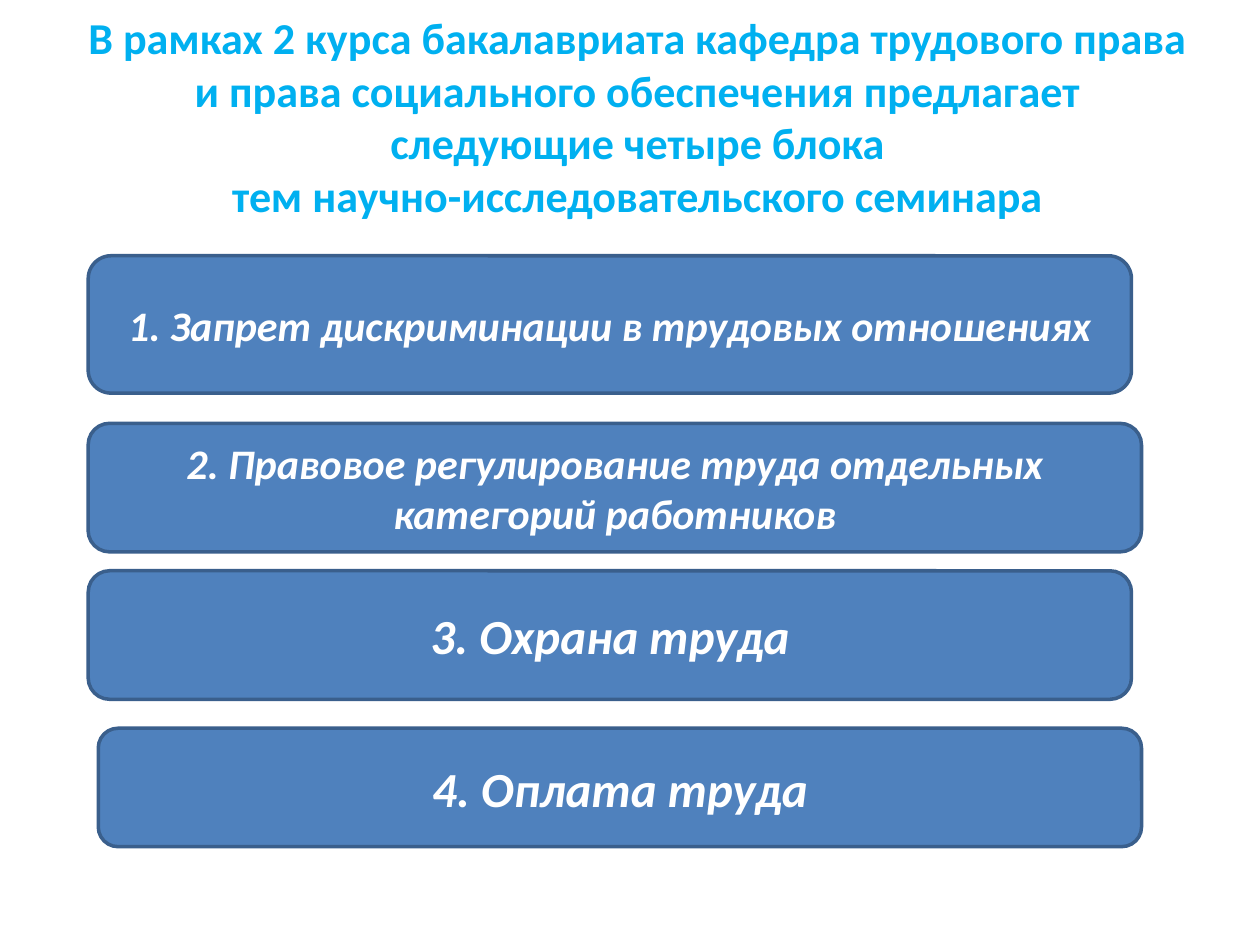
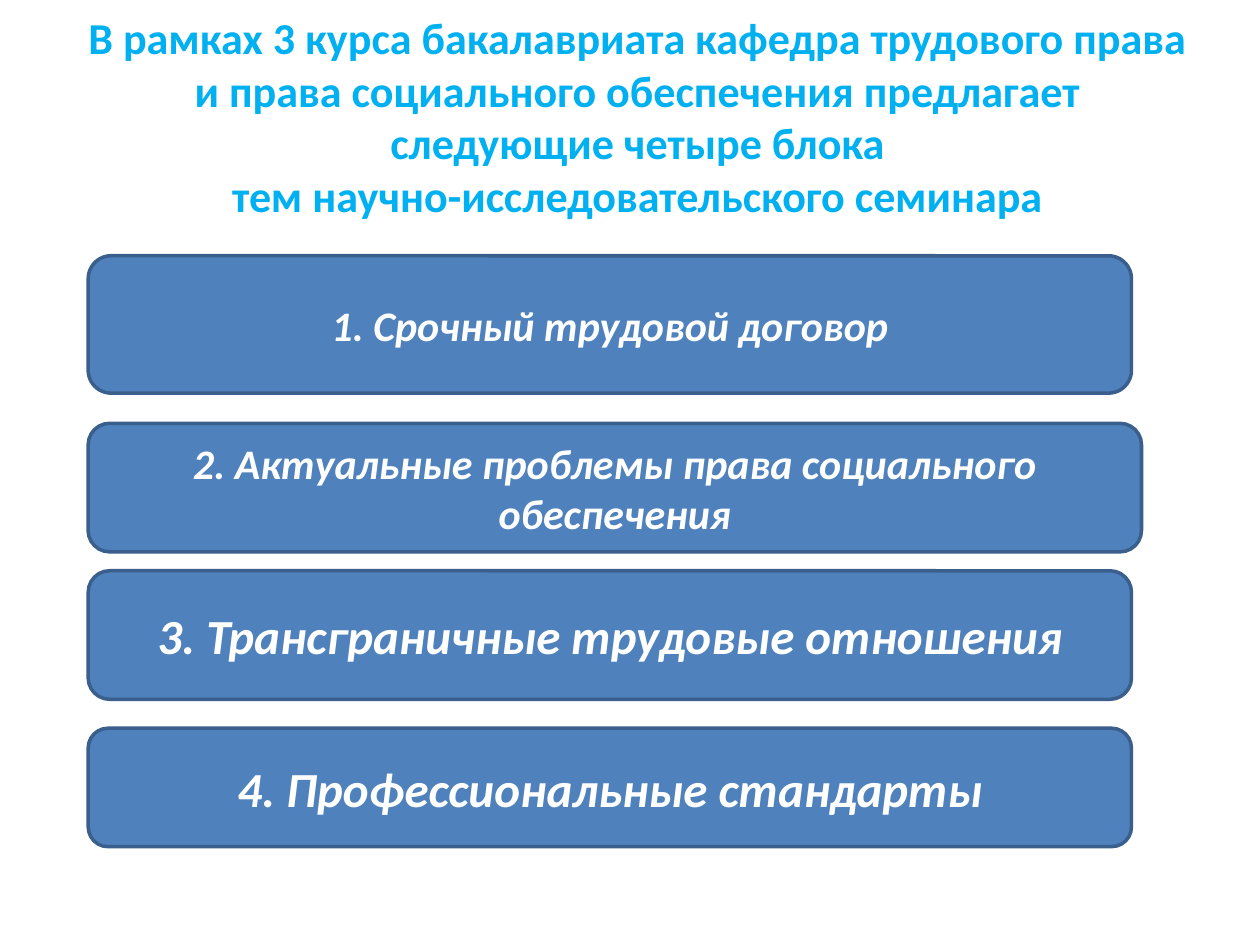
from dataclasses import dataclass

from pptx import Presentation
from pptx.dml.color import RGBColor
from pptx.enum.shapes import MSO_SHAPE
from pptx.enum.text import MSO_ANCHOR, MSO_AUTO_SIZE, PP_ALIGN
from pptx.util import Inches, Pt

ROUNDED = MSO_SHAPE.ROUNDED_RECTANGLE
MIDDLE = MSO_ANCHOR.MIDDLE
CENTER = PP_ALIGN.CENTER
NO_AUTOFIT = MSO_AUTO_SIZE.NONE


@dataclass(frozen=True)
class Theme:
    font: str = "Calibri"
    title_color: RGBColor = RGBColor(0x00, 0xB0, 0xF0)
    block_fill: RGBColor = RGBColor(0x4F, 0x81, 0xBD)
    block_line: RGBColor = RGBColor(0x3A, 0x5F, 0x8C)
    block_text: RGBColor = RGBColor(0xFF, 0xFF, 0xFF)
    title_size: float = 25.2
    long_size: float = 24
    short_size: float = 28
    line_width: float = 2


THEME = Theme()

TITLE = ("В рамках {} курса бакалавриата кафедра трудового права "
         "и права социального обеспечения предлагает следующие четыре блока"
         "\vтем научно-исследовательского семинара")

# Topic rows: left, top, width, height in inches, then type size
ROWS = [
    (0.7, 2.03, 8.28, 1.09, THEME.long_size),
    (0.7, 3.36, 8.36, 1.02, THEME.long_size),
    (0.7, 4.53, 8.28, 1.02, THEME.short_size),
    (0.7, 5.78, 8.28, 0.94, THEME.short_size),
]

# Year of study, left edge of the last block, topics
SEMINARS = [
    (2, 0.78, [
        "Запрет дискриминации в трудовых отношениях",
        "Правовое регулирование труда отдельных категорий работников",
        "Охрана труда",
        "Оплата труда",
    ]),
    (3, 0.7, [
        "Срочный трудовой договор",
        "Актуальные проблемы права социального обеспечения",
        "Трансграничные трудовые отношения",
        "Профессиональные стандарты",
    ]),
]


def write_text(s, text, size, color, italic=False):
    """Fill a shape with one centred bold paragraph."""
    tf = s.text_frame
    frame_format = {"word_wrap": True, "auto_size": NO_AUTOFIT,
                    "vertical_anchor": MIDDLE}
    for name, value in frame_format.items():
        setattr(tf, name, value)
    p = tf.paragraphs[0]
    p.text = text
    p.alignment = CENTER
    font_format = {"name": THEME.font, "size": Pt(size), "bold": True,
                   "italic": italic}
    for r in p.runs:
        for name, value in font_format.items():
            setattr(r.font, name, value)
        r.font.color.rgb = color


def add_title(slide, year):
    title = slide.shapes.title
    title.left, title.top = Inches(0.53), Inches(0.7)
    title.width, title.height = Inches(9.02), Inches(0.86)
    write_text(title, TITLE.format(year), THEME.title_size, THEME.title_color)
    # The deep bottom margin lifts the heading clear of the first block
    title.text_frame.margin_left = Inches(0.14)
    title.text_frame.margin_bottom = Inches(0.47)


def add_block(slide, left, top, width, height, text, size):
    s = slide.shapes.add_shape(ROUNDED, Inches(left), Inches(top),
                               Inches(width), Inches(height))
    s.shadow.inherit = False
    s.fill.solid()
    s.fill.fore_color.rgb = THEME.block_fill
    s.line.color.rgb = THEME.block_line
    s.line.width = Pt(THEME.line_width)
    write_text(s, text, size, THEME.block_text, italic=True)


def add_seminar(prs, year, last_left, topics):
    slide = prs.slides.add_slide(prs.slide_layouts.get_by_name("Title Only"))
    add_title(slide, year)
    for number, (row, topic) in enumerate(zip(ROWS, topics), start=1):
        left, top, width, height, size = row
        if number == len(ROWS):
            left = last_left
        add_block(slide, left, top, width, height, f"{number}. {topic}", size)


def main():
    prs = Presentation()
    prs.slide_width, prs.slide_height = Inches(10), Inches(7.5)
    for year, last_left, topics in SEMINARS:
        add_seminar(prs, year, last_left, topics)
    prs.save("out.pptx")


if __name__ == "__main__":
    main()
